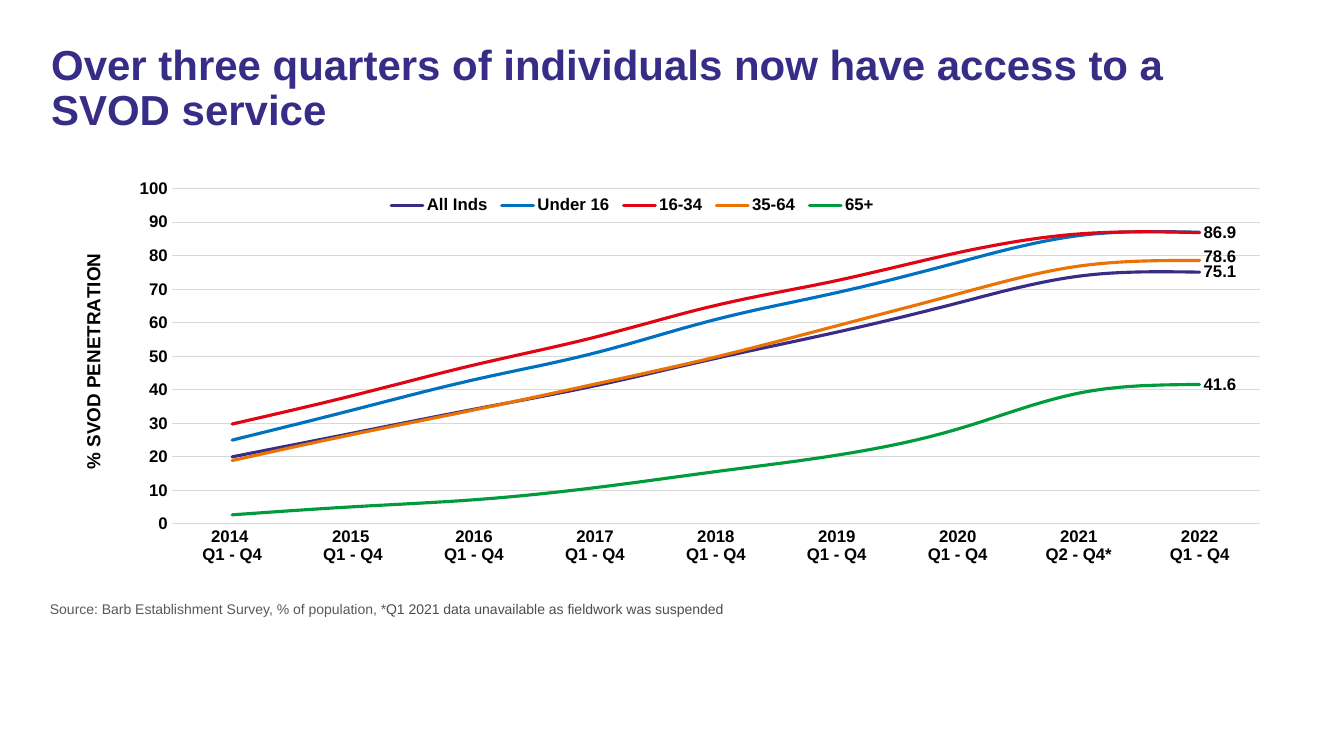
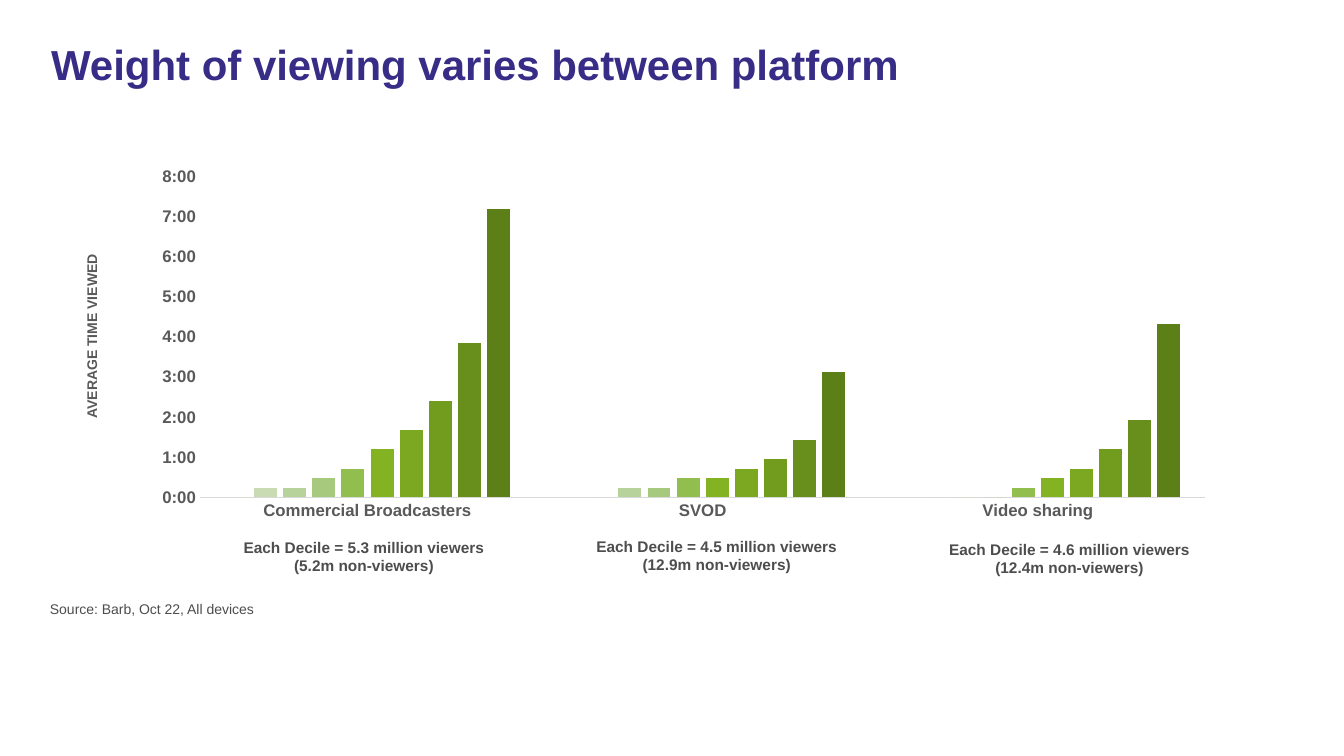
from lxml import etree
from pptx import Presentation
from pptx import util as u
from pptx.chart import data as chart_data
from pptx.dml.color import RGBColor
from pptx.enum import chart as ch, text
from pptx.oxml.ns import qn

FONT = "Arial"
COLOURS = {
    "title": "372D87", "text": "4D4D4D", "muted": "595959", "black": "000000",
    "rule": "D9D9D9",
}

deck = Presentation()
deck.slide_width, deck.slide_height = u.Cm(33.87), u.Cm(19.05)


def add_text(page, place, lines, size, colour, bold=False, centred=False):
    """Add a box at place (left, top, width, height in cm), one paragraph per line."""
    box = page.shapes.add_textbox(*map(u.Cm, place))
    frame = box.text_frame
    frame.word_wrap = True
    frame.text = "\n".join(lines)
    for para in frame.paragraphs:
        if centred:
            para.alignment = text.PP_ALIGN.CENTER
        for span in para.runs:
            span.font.name, span.font.size, span.font.bold = FONT, u.Pt(size), bold
            span.font.color.rgb = RGBColor.from_string(COLOURS[colour])
    return box


def set_layout(parent, index, inner=False, offset=False, **fractions):
    """Place a chart part, or offset it, by fractions of the chart area.

    The index is the slot of the layout element in parent.
    """
    for old in parent.findall(qn("c:layout")):
        parent.remove(old)
    layout = etree.Element(qn("c:layout"))
    parent.insert(index, layout)
    manual = etree.SubElement(layout, qn("c:manualLayout"))
    if inner:
        etree.SubElement(manual, qn("c:layoutTarget")).set("val", "inner")
    for side in "" if offset else "xy":
        etree.SubElement(manual, qn(f"c:{side}Mode")).set("val", "edge")
    for key, value in fractions.items():
        etree.SubElement(manual, qn(f"c:{key}")).set("val", str(value))


# Contents of the two charts
access = chart_data.CategoryChartData()
access.categories = [
    "2014 \nQ1 - Q4", "2015 \nQ1 - Q4",
    *(f"{year}\nQ1 - Q4" for year in range(2016, 2021)),
    "2021\nQ2 - Q4*", "2022\nQ1 - Q4",
]
age_groups = [
    ("All Inds", "372D87", [20, 27.1, 34.2, 41.2, 49.4, 57.2, 65.9, 73.9, 75.1]),
    ("Under 16", "0070C0", [25, 34, 43, 51, 61, 69, 78, 86, 87]),
    ("16-34", "E10514", [29.8, 38.3, 47.4, 55.7, 65.2, 72.6, 80.9, 86.5, 86.9]),
    ("35-64", "EB7305", [18.9, 26.7, 34, 41.7, 49.8, 59.1, 68.6, 76.9, 78.6]),
    ("65+", "009B3C", [2.7, 5.1, 7.2, 10.8, 15.6, 20.5, 28.3, 39, 41.6]),
]
for name, _, values in age_groups:
    access.add_series(name, values)

# Viewing times are fractions of a day
viewing = chart_data.CategoryChartData()
viewing.categories = ["Commercial Broadcasters", "SVOD", "Video sharing"]
deciles = [
    ("D6E4C8", [0, 0, 0]),
    ("C8DBB3", [0.01, 0, 0]),
    ("B8D29B", [0.01, 0.01, 0]),
    ("A7C97E", [0.02, 0.01, 0]),
    ("92BE50", [0.03, 0.02, 0.01]),
    ("83B322", [0.05, 0.02, 0.02]),
    ("7BA820", [0.07, 0.03, 0.03]),
    ("729C1E", [0.1, 0.04, 0.05]),
    ("688F1B", [0.16, 0.06, 0.08]),
    ("5D7F18", [0.3, 0.13, 0.18]),
]
for number, (_, values) in enumerate(deciles, 1):
    viewing.add_series(f"Series {number}", values)

# Shared structure: title, source line and a chart with plain axes
slides = [
    {
        "title": "Over three quarters of individuals now have access to a SVOD service",
        "source": "Source: Barb Establishment Survey, % of population, *",
        "source_colour": "muted",
        "kind": ch.XL_CHART_TYPE.LINE, "data": access,
        "place": (1.04, 4.53, 30.73, 10.36),
        "plot": {"x": 0.107, "y": 0.02, "w": 0.893, "h": 0.817},
        "axis_colour": "black", "top": 100, "step": 10, "format": "General",
    },
    {
        "title": "Weight of viewing varies between platform",
        "source": "Source: Barb, Oct 22, All devices",
        "source_colour": "text",
        "kind": ch.XL_CHART_TYPE.COLUMN_CLUSTERED, "data": viewing,
        "place": (1.04, 2.92, 31.48, 11.33),
        "plot": {"x": 0.127, "y": 0.135, "w": 0.805, "h": 0.714},
        "axis_colour": "muted", "top": 8 / 24, "step": 1 / 24, "format": "h:mm",
    },
]
pages, sources, charts = [], [], []
for item in slides:
    page = deck.slides.add_slide(deck.slide_layouts[6])
    title = add_text(page, (1.04, 0.99, 31.5, 2.84), [item["title"]], 30, "title", bold=True)
    title.text_frame.paragraphs[0].line_spacing = 0.9
    source = add_text(page, (1.01, 15.01, 31.5, 0.84), [item["source"]], 10,
                      item["source_colour"])

    chart = page.shapes.add_chart(
        item["kind"], *map(u.Cm, item["place"]), item["data"]).chart
    chart.has_title = False
    chart.has_legend = False
    chart.font.name, chart.font.size = FONT, u.Pt(10)
    chart.plots[0].vary_by_categories = False
    set_layout(chart.element.find(".//" + qn("c:plotArea")), 0, inner=True, **item["plot"])
    for axis in (chart.category_axis, chart.value_axis):
        axis.major_tick_mark = axis.minor_tick_mark = ch.XL_TICK_MARK.NONE
        font = axis.tick_labels.font
        font.name, font.size, font.bold = FONT, u.Pt(12), True
        font.color.rgb = RGBColor.from_string(COLOURS[item["axis_colour"]])
    base_line = chart.category_axis.format.line
    base_line.width = u.Pt(0.75)
    base_line.color.rgb = RGBColor.from_string(COLOURS["rule"])
    scale = chart.value_axis
    scale.format.line.fill.background()
    scale.has_major_gridlines = False
    scale.minimum_scale, scale.maximum_scale = 0, item["top"]
    scale.major_unit = item["step"]
    scale.tick_labels.number_format = item["format"]
    scale.tick_labels.number_format_is_linked = False
    pages.append(page)
    sources.append(source)
    charts.append(chart)

# Slide 1: access by age group
span = sources[0].text_frame.paragraphs[0].add_run()
span.text = "Q1 2021 data unavailable as fieldwork was suspended"
span.font.name, span.font.size = FONT, u.Pt(10)
span.font.color.rgb = RGBColor.from_string(COLOURS["text"])

line_chart = charts[0]
scale = line_chart.value_axis
scale.has_major_gridlines = True
grid = scale.major_gridlines.format.line
grid.width = u.Pt(0.75)
grid.color.rgb = RGBColor.from_string(COLOURS["rule"])

scale.has_title = True
scale.axis_title.text_frame.text = "% SVOD PENETRATION"
span = scale.axis_title.text_frame.paragraphs[0].runs[0]
span.font.name, span.font.size, span.font.bold = FONT, u.Pt(13.5), True
span.font.color.rgb = RGBColor.from_string(COLOURS["black"])
axis_title = line_chart.element.find(".//" + qn("c:valAx") + "/" + qn("c:title"))
axis_title.find(".//" + qn("a:bodyPr")).set("rot", "-5400000")
set_layout(axis_title, 1, x=0.03, y=0.17)

line_chart.has_legend = True
legend = line_chart.legend
legend.position = ch.XL_LEGEND_POSITION.BOTTOM
legend.include_in_layout = False
legend.font.name, legend.font.size, legend.font.bold = FONT, u.Pt(12), True
legend.font.color.rgb = RGBColor.from_string(COLOURS["black"])
set_layout(line_chart.element.find(".//" + qn("c:legend")), 1, x=0.28, y=0.03, w=0.41, h=0.06)

for series, (name, colour, values) in zip(line_chart.plots[0].series, age_groups):
    series.smooth = True
    series.marker.style = ch.XL_MARKER_STYLE.NONE
    series.format.line.width = u.Pt(2.25)
    series.format.line.color.rgb = RGBColor.from_string(colour)
    if name != "Under 16":
        series.data_labels.show_value = False
        label = series.points[len(values) - 1].data_label
        label.font.name, label.font.size, label.font.bold = FONT, u.Pt(12), True
        label.font.color.rgb = RGBColor.from_string(COLOURS["black"])
        label.position = ch.XL_LABEL_POSITION.RIGHT

for series_xml, (name, _, _) in zip(line_chart.element.iter(qn("c:ser")), age_groups):
    series_xml.find(qn("c:spPr") + "/" + qn("a:ln")).set("cap", "rnd")
    if name == "35-64":  # lifted clear of the label below
        set_layout(series_xml.find(".//" + qn("c:dLbl")), 1, offset=True, x=0, y=-0.01)

# Slide 2: viewing by decile
columns = charts[1].plots[0]
columns.gap_width, columns.overlap = 219, -27
for series, (colour, _) in zip(columns.series, deciles):
    series.format.fill.solid()
    series.format.fill.fore_color.rgb = RGBColor.from_string(colour)

decile_notes = [(13.46, "5.3", "5.2"), (13.44, "4.5", "12.9"), (13.51, "4.6", "12.4")]
for column, (top, viewers, others) in enumerate(decile_notes):
    note = add_text(
        pages[1], (4.73 + 8.89 * column, top, 8.89, 1.12),
        [f"Each Decile = {viewers} million viewers", f"({others}m non-viewers)"],
        11, "text", bold=True, centred=True)
    note.text_frame.vertical_anchor = text.MSO_ANCHOR.MIDDLE

time_label = add_text(pages[1], (-1.57, 8.13, 7.77, 0.69), ["AVERAGE TIME VIEWED"],
                      10, "muted", bold=True, centred=True)
time_label.rotation = 270

deck.save("out.pptx")
